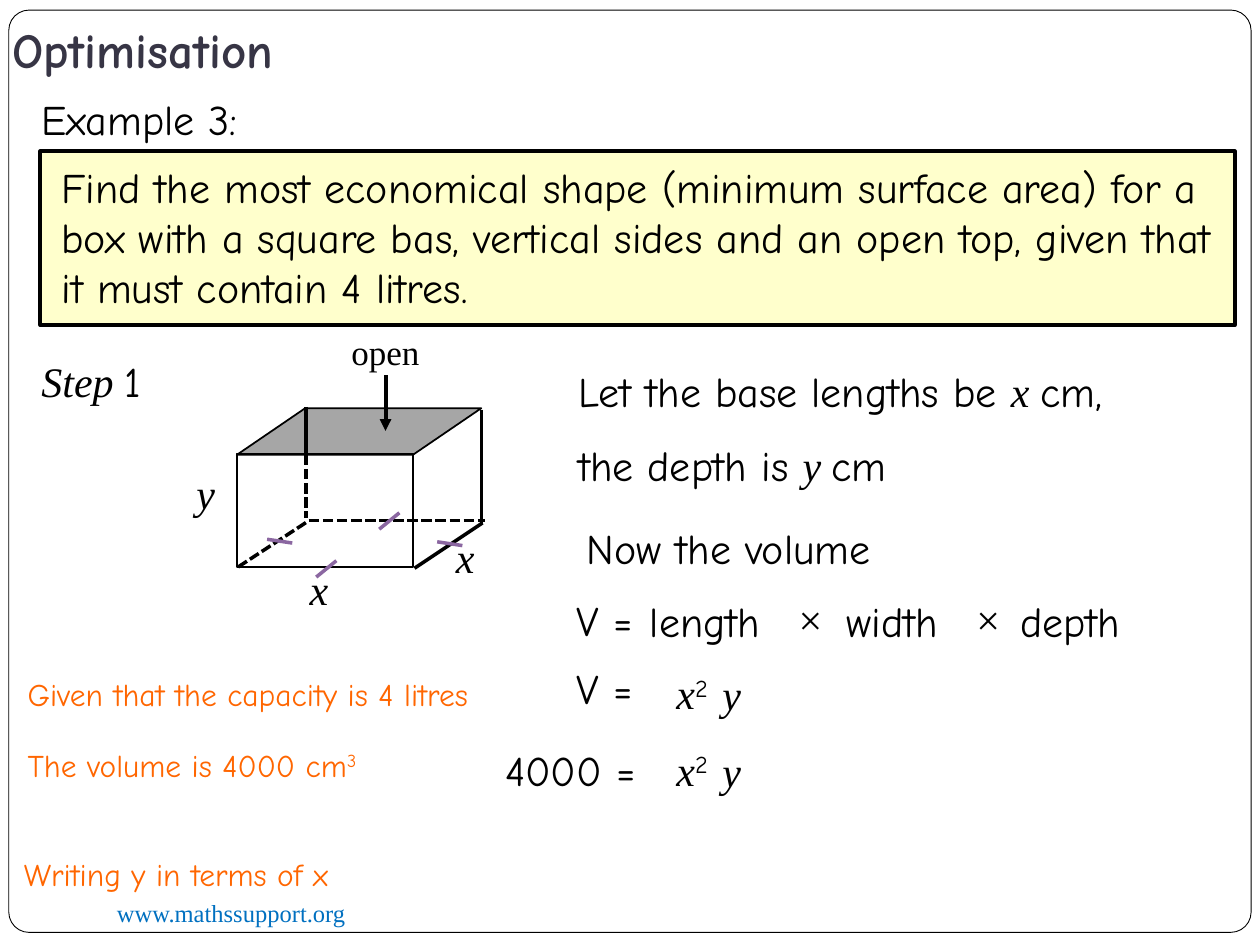
from dataclasses import dataclass

from lxml import etree
from pptx import Presentation
from pptx.dml.color import RGBColor
from pptx.enum.dml import MSO_LINE
from pptx.enum.shapes import MSO_CONNECTOR, MSO_SHAPE
from pptx.enum.text import MSO_ANCHOR, MSO_AUTO_SIZE
from pptx.oxml.ns import qn
from pptx.util import Inches, Pt


@dataclass(frozen=True)
class Theme:
    ink: str = "000000"
    paper: str = "FFFFFF"
    title: str = "373545"
    panel: str = "FFFFCC"
    lid: str = "A6A6A6"
    tick: str = "8B67A1"
    note: str = "FF6600"
    link: str = "0070C0"
    hand: str = "Comic Neue"
    serif: str = "Times New Roman"
    title_size: int = 28
    body_size: int = 24
    label_size: int = 20
    note_size: int = 18
    footer_size: int = 14


class SlideBuilder:
    """Places elements on a grid of 100 columns by 75 rows."""

    def __init__(self, deck, theme):
        self.theme = theme
        self.column = deck.slide_width / 100
        self.row = deck.slide_height / 75
        self.page = deck.slides.add_slide(deck.slide_layouts[6])

    def place(self, column, row):
        return round(column * self.column), round(row * self.row)

    def shape(self, kind, at, fill=None, width=1.0, adjust=None):
        shape = self.page.shapes.add_shape(kind, *self.place(*at[:2]), *self.place(*at[2:]))
        shape.shadow.inherit = False
        if adjust is not None:
            shape.adjustments[0] = adjust
        if fill:
            shape.fill.solid()
            shape.fill.fore_color.rgb = RGBColor.from_string(fill)
        else:
            shape.fill.background()
        shape.line.color.rgb = RGBColor.from_string(self.theme.ink)
        shape.line.width = Pt(width)
        return shape

    def text(self, at, *spans, size=None, color=None, wrap=True, bold=None):
        """Each span is plain text or a pair of text and style: math, serif or power."""
        box = self.page.shapes.add_textbox(*self.place(*at[:2]), *self.place(*at[2:]))
        frame = box.text_frame
        frame.word_wrap = wrap
        frame.auto_size = MSO_AUTO_SIZE.SHAPE_TO_FIT_TEXT
        para = frame.paragraphs[0]
        for item in spans:
            words, style = (item, "plain") if isinstance(item, str) else item
            span = para.add_run()
            span.text = words
            font = span.font
            font.name = self.theme.serif if style in ("math", "serif") else self.theme.hand
            font.size = Pt(size or self.theme.body_size)
            font.color.rgb = RGBColor.from_string(color or self.theme.ink)
            font.italic = style == "math"
            font.bold = bold
            if style == "power":
                span._r.get_or_add_rPr().set("baseline", "30000")
        return box

    def line(self, start, end, color=None, width=2.0, dashed=False, arrow=False):
        connector = self.page.shapes.add_connector(
            MSO_CONNECTOR.STRAIGHT, *self.place(*start), *self.place(*end))
        connector.line.color.rgb = RGBColor.from_string(color or self.theme.ink)
        connector.line.width = Pt(width)
        if dashed:
            connector.line.dash_style = MSO_LINE.SQUARE_DOT
        if arrow:
            tail = etree.SubElement(connector.line._get_or_add_ln(), qn("a:tailEnd"))
            tail.set("type", "triangle")
        etree.SubElement(connector._element.spPr, qn("a:effectLst"))


def add_heading(slide, theme):
    # Page border, web address and title
    slide.shape(MSO_SHAPE.ROUNDED_RECTANGLE, (0.7, 0.8, 98.6, 73.2), theme.paper, 0.5, 0.022)
    slide.text((8.3, 70.8, 32.5, 3.4), ("www.mathssupport.org", "serif"),
               size=theme.footer_size, color=theme.link)
    title = slide.text((0, 0.5, 85, 6.7), "Optimisation", size=theme.title_size,
                       color=theme.title, bold=True).text_frame
    title.auto_size = MSO_AUTO_SIZE.NONE
    title.vertical_anchor = MSO_ANCHOR.BOTTOM
    title.margin_bottom = Inches(0.1)

    # Problem statement
    slide.text((2.3, 6.9, 58.2, 5), "Example 3:")
    slide.shape(MSO_SHAPE.RECTANGLE, (3.2, 12, 94.8, 13.8), theme.panel, 2.25)
    slide.text((3.9, 12.3, 93.3, 13.1),
               "Find the most economical shape (minimum surface area) for a box with a "
               "square bas, vertical sides and an open top, given that it must contain 4 litres.")


def add_open_box(slide, theme):
    # Lid and front face
    slide.shape(MSO_SHAPE.PARALLELOGRAM, (18.8, 32.4, 19.4, 3.7), theme.lid, adjust=1.466)
    slide.shape(MSO_SHAPE.RECTANGLE, (18.8, 36, 14, 9))

    # Hidden edges, then visible edges
    for start, end in [((18.9, 45), (24.4, 41.4)), ((24.5, 41.3), (38.5, 41.3)),
                       ((24.3, 36.1), (24.3, 41.1))]:
        slide.line(start, end, dashed=True)
    for start, end in [((32.9, 45.1), (38.3, 41.5)), ((38.2, 32.5), (38.2, 41.5)),
                       ((24.3, 32.3), (24.3, 36.3))]:
        slide.line(start, end)

    # Equal-length ticks: slanted on the widths, flat on the depths
    for column, row in [(26.7, 44.5), (31.7, 40.7)]:
        slide.line((column, row), (column - 1.6, row + 1.3), theme.tick)
    for column, row in [(34.7, 43), (21.2, 42.8)]:
        slide.line((column, row), (column + 2, row + 0.3), theme.tick)

    # Labels
    for letter, column, row in [("x", 23.6, 44.2), ("x", 35.2, 41.7), ("y", 14.6, 36.6)]:
        slide.text((column, row, 3.5, 5), (letter, "math"), wrap=False)
    slide.text((26.9, 25.7, 7.5, 4.4), ("open", "serif"), size=theme.label_size, wrap=False)
    slide.line((30.6, 29.8), (30.6, 34.2), width=2.25, arrow=True)


def add_working(slide, theme):
    # Definitions
    slide.text((2.3, 27.7, 10.2, 5), ("Step ", "math"), "1", wrap=False)
    slide.text((44.9, 28.5, 53, 5), "Let the base lengths be ", ("x ", "math"), "cm,")
    slide.text((44.9, 34.4, 32.2, 5), "the depth is ", ("y ", "math"), "cm")
    slide.text((45.6, 41, 31, 5), "Now the volume")

    # Volume in words
    for word, column in [("length", 50.6), ("width", 66.2), ("depth", 80)]:
        slide.text((column, 46.8, 12.8, 5), word)
    for column in (62.4, 76.5):
        slide.text((column, 46.6, 3.9, 5), ("×", "serif"), wrap=False)

    # Left-hand sides
    for row in (46.7, 52.1):
        slide.text((44.8, row, 8.2, 5), "V =")
    slide.text((39.1, 58.6, 13.1, 5), "4000 =")

    # Right-hand sides
    for row in (52.5, 58.6):
        slide.text((52.7, row, 5.2, 5), ("x", "math"), ("2", "power"))
        slide.text((56.35, row + 0.1, 5.2, 5), ("y", "math"))

    # Side notes
    notes = [
        (1.2, 53.1, ["Given that the capacity is 4 litres"]),
        (1.2, 58.7, ["The volume is 4000 cm", ("3", "power")]),
        (0.9, 67.4, ["Writing y in terms of x"]),
    ]
    for column, row, spans in notes:
        slide.text((column, row, 44.8, 4), *spans, size=theme.note_size, color=theme.note)


def main():
    deck = Presentation()
    deck.slide_width, deck.slide_height = Inches(10), Inches(7.5)
    theme = Theme()
    slide = SlideBuilder(deck, theme)
    add_heading(slide, theme)
    add_open_box(slide, theme)
    add_working(slide, theme)
    deck.save("out.pptx")


if __name__ == "__main__":
    main()
